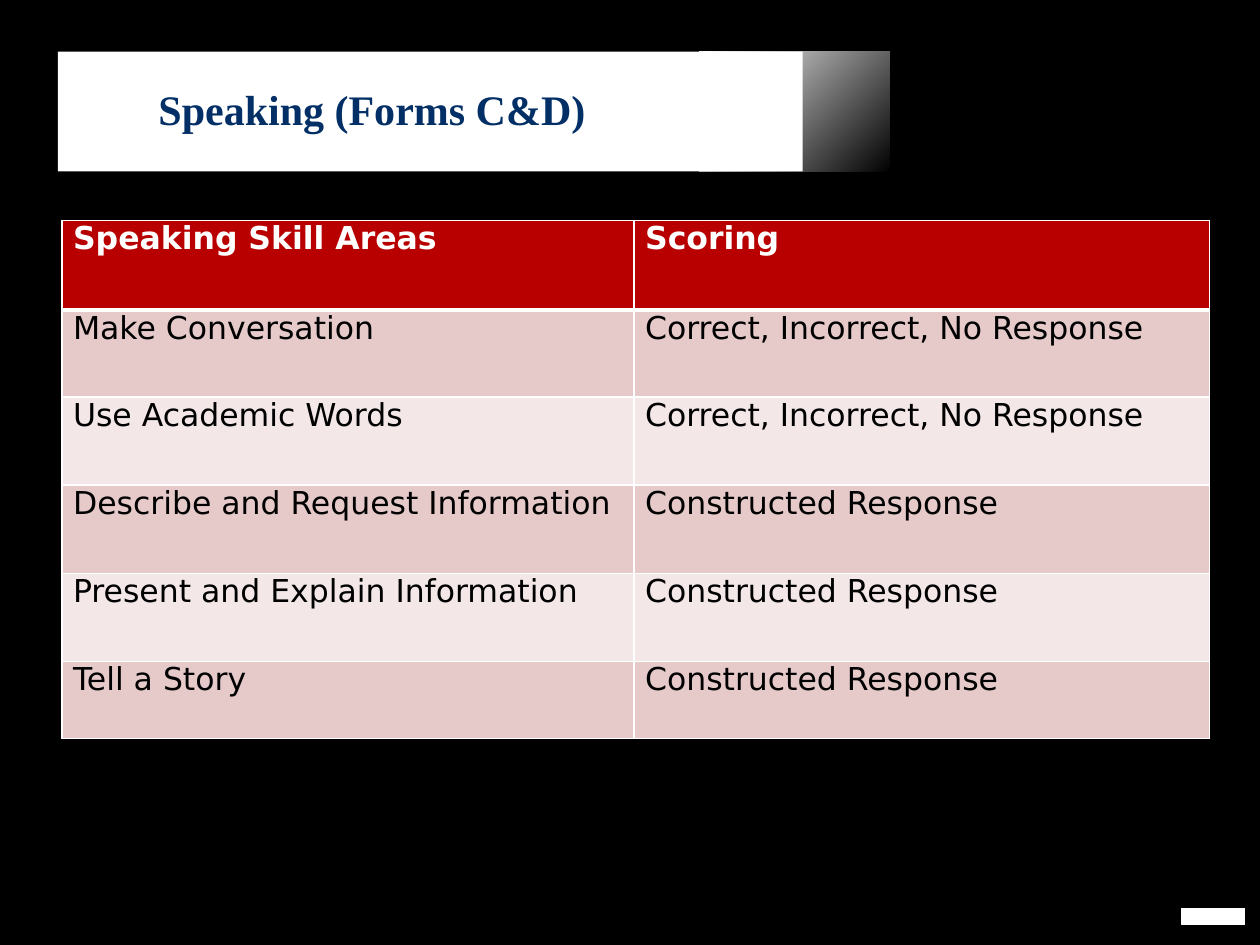
from dataclasses import dataclass
from typing import NamedTuple

from lxml.etree import SubElement
from pptx import Presentation
from pptx.dml.color import RGBColor as RGB
from pptx.enum.shapes import MSO_SHAPE as Shape
from pptx.enum.text import MSO_ANCHOR as Anchor
from pptx.oxml import parse_xml
from pptx.oxml.ns import nsdecls, qn
from pptx.util import Inches, Pt


@dataclass(frozen=True)
class Theme:
    back: RGB = RGB(0, 0, 0)
    white: RGB = RGB(255, 255, 255)
    ink: RGB = RGB(0, 0, 0)
    navy: RGB = RGB(0x02, 0x2F, 0x65)
    head: RGB = RGB(0xB8, 0x00, 0x00)
    bands: tuple = (RGB(0xE6, 0xCA, 0xCA), RGB(0xF3, 0xE7, 0xE7))
    title_font: str = "Times New Roman"
    body_font: str = "DejaVu Sans"
    title_size: int = 24
    body_size: int = 18
    thin: int = 1
    thick: int = 3


class Box(NamedTuple):
    left: float
    top: float
    width: float
    height: float

    def lengths(self) -> list:
        return [Inches(v) for v in self]


class Skill(NamedTuple):
    name: str
    scoring: str


THEME = Theme()
CHOICE = "Correct, Incorrect, No Response"
BUILT = "Constructed Response"
HEADER = Skill("Speaking Skill Areas", "Scoring")
SKILLS = [
    Skill("Make Conversation", CHOICE),
    Skill("Use Academic Words", CHOICE),
    Skill("Describe and Request Information", BUILT),
    Skill("Present and Explain Information", BUILT),
    Skill("Tell a Story", BUILT),
]
COLS = (4.54, 4.57)
ROWS = (0.71, 0.69, 0.7, 0.7, 0.7, 0.61)


def add_rect(slide, box: Box):
    rect = slide.shapes.add_shape(Shape.RECTANGLE, *box.lengths())
    rect.shadow.inherit = False
    rect.fill.solid()
    rect.fill.fore_color.rgb = THEME.white
    rect.line.fill.background()
    return rect


def fade(rect) -> None:
    """Fade the white fill to clear, towards the lower right."""
    rect.fill.gradient()
    rect.fill.gradient_angle = 315
    for stop in rect.fill.gradient_stops:
        stop.color.rgb = THEME.white
    last = rect._element.findall(".//" + qn("a:srgbClr"))[-1]
    SubElement(last, qn("a:alpha"), val="0")


def style(para, font: str, size: int, color: RGB, bold: bool) -> None:
    for run in para.runs:
        run.font.name = font
        run.font.size = Pt(size)
        run.font.color.rgb = color
        run.font.bold = bold


def add_title(slide, box: Box, text: str) -> None:
    frame = slide.shapes.add_textbox(*box.lengths()).text_frame
    frame.word_wrap = True
    frame.vertical_anchor = Anchor.MIDDLE
    frame.text = text
    style(frame.paragraphs[0], THEME.title_font, THEME.title_size, THEME.navy, True)


def set_borders(cell, top: int, bottom: int) -> None:
    widths = {"lnL": THEME.thin, "lnR": THEME.thin, "lnT": top, "lnB": bottom}
    props = cell._tc.get_or_add_tcPr()
    for spot, (tag, width) in enumerate(widths.items()):
        props.insert(spot, parse_xml(
            f'<a:{tag} {nsdecls("a")} w="{Pt(width)}"><a:solidFill>'
            f'<a:srgbClr val="{THEME.white}"/></a:solidFill></a:{tag}>'))


def fill_cell(cell, text: str, row: int) -> None:
    head = row == 0
    cell.margin_left = Inches(0.09)
    cell.margin_right = cell.margin_top = cell.margin_bottom = 0
    cell.text_frame.text = text
    style(cell.text_frame.paragraphs[0], THEME.body_font, THEME.body_size,
          THEME.white if head else THEME.ink, head)
    cell.fill.solid()
    cell.fill.fore_color.rgb = THEME.head if head else THEME.bands[(row - 1) % 2]
    set_borders(cell, THEME.thick if row == 1 else THEME.thin,
                THEME.thick if head else THEME.thin)


def add_skills(slide, left: float, top: float) -> None:
    box = Box(left, top, sum(COLS), sum(ROWS))
    table = slide.shapes.add_table(len(ROWS), len(COLS), *box.lengths()).table
    for col, width in zip(table.columns, COLS):
        col.width = Inches(width)
    for row, (height, skill) in enumerate(zip(ROWS, [HEADER, *SKILLS])):
        table.rows[row].height = Inches(height)
        for col, text in enumerate(skill):
            fill_cell(table.cell(row, col), text, row)


def main() -> None:
    deck = Presentation()
    deck.slide_width, deck.slide_height = Inches(10), Inches(7.5)
    slide = deck.slides.add_slide(deck.slide_layouts[6])
    slide.background.fill.solid()
    slide.background.fill.fore_color.rgb = THEME.back

    fade(add_rect(slide, Box(5.55, 0.41, 1.51, 0.95)))
    add_rect(slide, Box(0.46, 0.41, 5.91, 0.95))
    label = add_rect(slide, Box(9.38, 7.21, 0.5, 0.13))
    label.line.color.rgb = THEME.white
    label.line.width = Pt(0.75)
    add_title(slide, Box(1.16, 0.53, 7.03, 0.66), "Speaking (Forms C&D)")
    add_skills(slide, 0.49, 1.75)
    deck.save("out.pptx")


if __name__ == "__main__":
    main()
